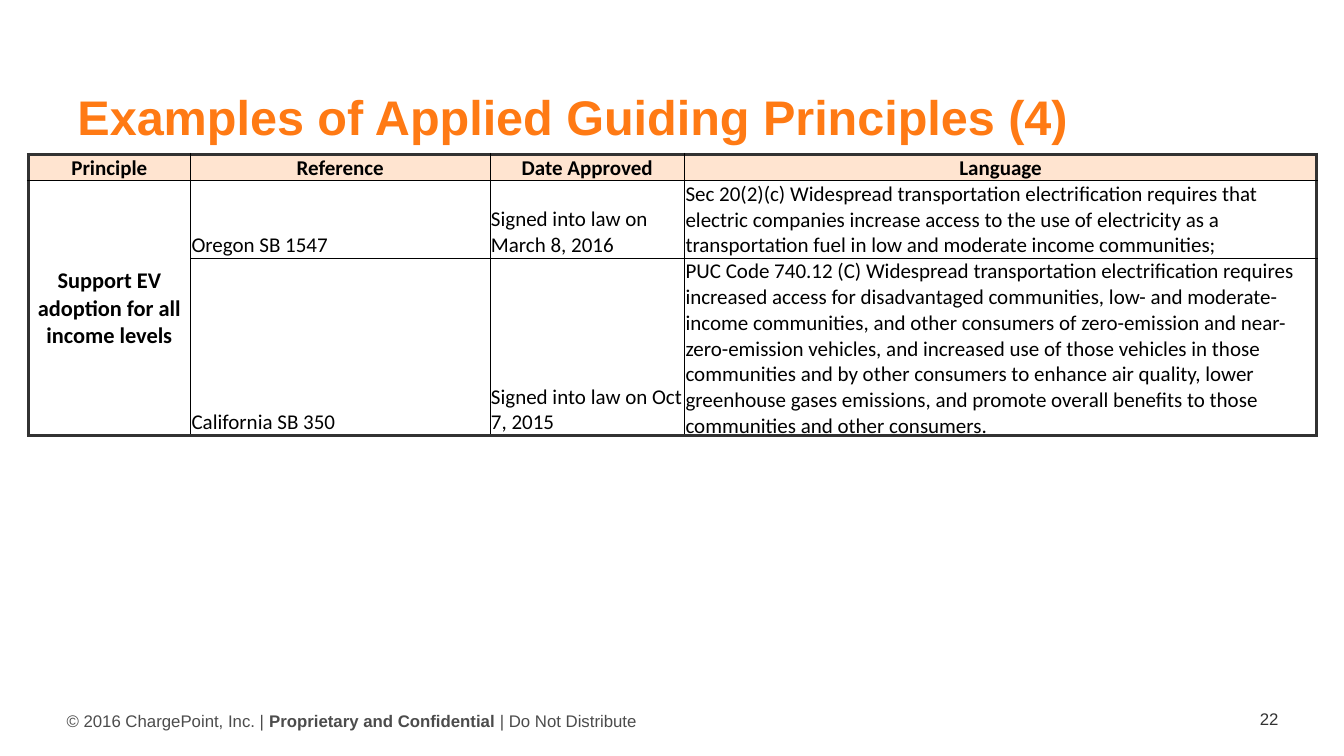
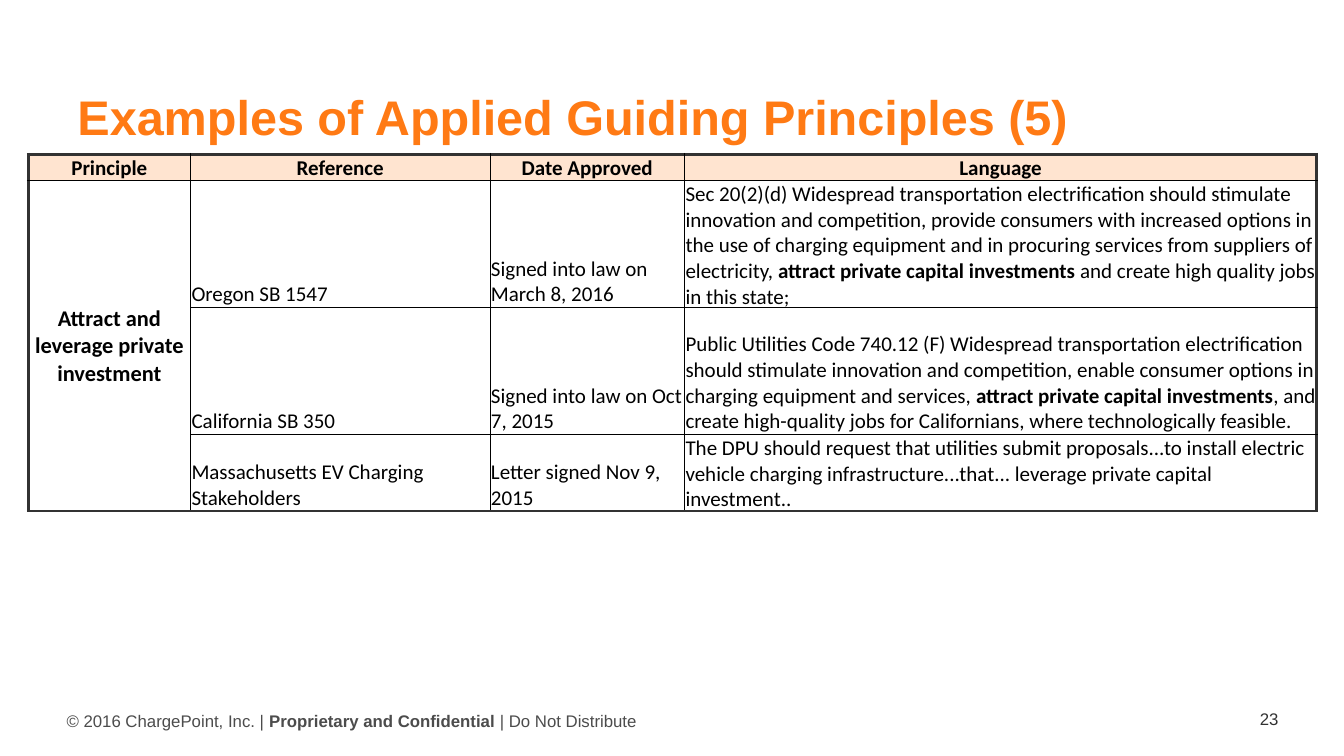
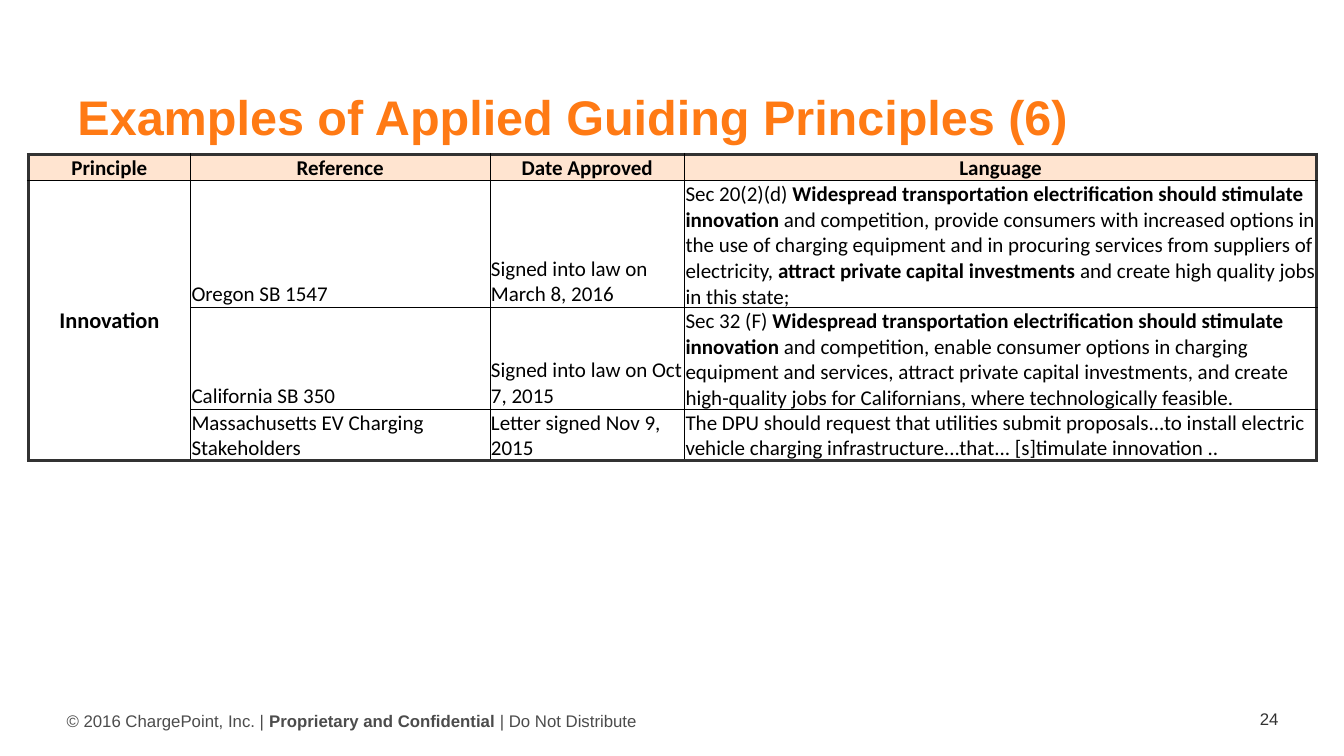
from lxml import etree
from pptx import Presentation
from pptx.dml.color import RGBColor
from pptx.enum import text as t
from pptx.oxml import ns
from pptx.util import Inches, Pt

ORANGE = RGBColor(0xFF, 0x7A, 0x14)
PEACH = RGBColor(0xFF, 0xE4, 0xD0)
BLACK = RGBColor(0x00, 0x00, 0x00)
CHARCOAL = RGBColor(0x32, 0x32, 0x32)
GREY = RGBColor(0x4C, 0x4C, 0x4C)

THIN = (BLACK, 0.5)
THICK = (CHARCOAL, 2.25)

TITLE = "Examples of Applied Guiding Principles ({})"
FOOTER = "© 2016 ChargePoint, Inc. | **Proprietary and Confidential **| Do Not Distribute"
HEADINGS = ["Principle", "Reference", "Date Approved", "Language"]
COLUMN_WIDTHS = [1.61, 2.97, 1.93, 6.27]
HEADING_HEIGHT = 0.26

OREGON = ("Oregon SB 1547", "Signed into law on March 8, 2016")
CALIFORNIA = ("California SB 350", "Signed into law on Oct 7, 2015")
MASSACHUSETTS = ("Massachusetts EV Charging Stakeholders", "Letter signed Nov 9, 2015")

# Each example: source, row height, quoted language
PRINCIPLES = [
    ("Support EV adoption for all income levels", [
        (OREGON, 0.77,
         "Sec 20(2)(c) Widespread transportation electrification requires that electric "
         "companies increase access to the use of electricity as a transportation fuel in "
         "low and moderate income communities;"),
        (CALIFORNIA, 1.76,
         "PUC Code 740.12 (C) Widespread transportation electrification requires increased "
         "access for disadvantaged communities, low- and moderate-income communities, and "
         "other consumers of zero-emission and near-zero-emission vehicles, and increased "
         "use of those vehicles in those communities and by other consumers to enhance air "
         "quality, lower greenhouse gases emissions, and promote overall benefits to those "
         "communities and other consumers."),
    ]),
    ("Attract and leverage private investment", [
        (OREGON, 1.26,
         "Sec 20(2)(d) Widespread transportation electrification should stimulate innovation "
         "and competition, provide consumers with increased options in the use of charging "
         "equipment and in procuring services from suppliers of electricity, **attract "
         "private capital investments** and create high quality jobs in this state;"),
        (CALIFORNIA, 1.26,
         "Public Utilities Code 740.12 (F) Widespread transportation electrification should "
         "stimulate innovation and competition, enable consumer options in charging "
         "equipment and services, **attract private capital investments**, and create "
         "high-quality jobs for Californians, where technologically feasible."),
        (MASSACHUSETTS, 0.76,
         "The DPU should request that utilities submit proposals...to install electric "
         "vehicle charging infrastructure...that... leverage private capital investment.."),
    ]),
    ("Innovation", [
        (OREGON, 1.26,
         "Sec 20(2)(d) **Widespread transportation electrification should stimulate "
         "innovation** and competition, provide consumers with increased options in the use "
         "of charging equipment and in procuring services from suppliers of electricity, "
         "**attract private capital investments** and create high quality jobs in this "
         "state;"),
        (CALIFORNIA, 1.01,
         "Sec 32 (F) **Widespread transportation electrification should stimulate "
         "innovation** and competition, enable consumer options in charging equipment and "
         "services, attract private capital investments, and create high-quality jobs for "
         "Californians, where technologically feasible."),
        (MASSACHUSETTS, 0.51,
         "The DPU should request that utilities submit proposals...to install electric "
         "vehicle charging infrastructure...that... [s]timulate innovation .."),
    ]),
]


def write(frame, text, size, color, font="Arial", bold=False, align=t.PP_ALIGN.LEFT):
    """Fill a text frame; parts between double asterisks become bold."""
    para = frame.paragraphs[0]
    para.alignment = align
    for index, part in enumerate(text.split("**")):
        span = para.add_run()
        span.text = part
        span.font.name = font
        span.font.size = Pt(size)
        span.font.bold = bold or index % 2 == 1
        span.font.color.rgb = color


def add_text(page, box, text, anchor=t.MSO_ANCHOR.TOP, wrap=True, **style):
    frame = page.shapes.add_textbox(*map(Inches, box)).text_frame
    frame.word_wrap = wrap
    frame.vertical_anchor = anchor
    write(frame, text, **style)
    return frame


def add_title(page, box, text):
    add_text(page, box, text, size=34.7, color=ORANGE, bold=True)


def add_footer(page, box, number):
    left, top, width, height = box
    frame = add_text(page, (left, top + 0.03, 5.81, 0.3), FOOTER, wrap=False,
                     size=12, color=GREY)
    frame.margin_left = 0
    frame.auto_size = t.MSO_AUTO_SIZE.SHAPE_TO_FIT_TEXT
    add_text(page, (left + width - 1.56, top, 1.56, height), str(number),
             anchor=t.MSO_ANCHOR.MIDDLE, size=12, color=CHARCOAL, align=t.PP_ALIGN.RIGHT)


def set_borders(cell, **edges):
    """Draw the sides L, R, T and B, each given as (colour, points)."""
    properties = cell._tc.get_or_add_tcPr()
    for index, side in enumerate("LRTB"):
        color, points = edges[side]
        line = etree.Element(ns.qn(f"a:ln{side}"), w=str(Pt(points)))
        fill = etree.SubElement(line, ns.qn("a:solidFill"))
        etree.SubElement(fill, ns.qn("a:srgbClr"), val=str(color))
        properties.insert(index, line)


def format_cell(cell, text, heading, centred, size):
    cell.margin_left = cell.margin_right = cell.margin_top = Inches(0.01)
    cell.margin_bottom = 0
    cell.vertical_anchor = t.MSO_ANCHOR.MIDDLE if centred else t.MSO_ANCHOR.BOTTOM
    if heading:
        cell.fill.solid()
        cell.fill.fore_color.rgb = PEACH
    else:
        cell.fill.background()
    if text:
        write(cell.text_frame, text, size=size, color=BLACK, font="Calibri", bold=centred,
              align=t.PP_ALIGN.CENTER if centred else t.PP_ALIGN.LEFT)


def add_principle_table(page, left, top, principle, examples):
    rows = [HEADINGS] + [["", *source, language] for source, _, language in examples]
    rows[1][0] = principle
    heights = [HEADING_HEIGHT] + [height for _, height, _ in examples]
    last_row, last_column = len(rows) - 1, len(HEADINGS) - 1
    table = page.shapes.add_table(
        len(rows), len(HEADINGS), Inches(left), Inches(top),
        Inches(sum(COLUMN_WIDTHS)), Inches(sum(heights))).table
    table.first_row = table.horz_banding = False
    for column, width in zip(table.columns, COLUMN_WIDTHS):
        column.width = Inches(width)
    for row, height in zip(table.rows, heights):
        row.height = Inches(height)
    table.cell(1, 0).merge(table.cell(last_row, 0))
    for r, texts in enumerate(rows):
        for c, text in enumerate(texts):
            cell = table.cell(r, c)
            in_principle = r > 0 and c == 0
            format_cell(cell, text, heading=r == 0, centred=r == 0 or c == 0,
                        size=16 if in_principle else 15)
            set_borders(cell,
                        L=THICK if c == 0 else THIN,
                        R=THICK if c == last_column else THIN,
                        T=THICK if r == 0 else THIN,
                        B=THICK if r == last_row or in_principle else THIN)


def main():
    deck = Presentation()
    deck.slide_width, deck.slide_height = Inches(13.33), Inches(7.5)
    for index, (principle, examples) in enumerate(PRINCIPLES):
        page = deck.slides.add_slide(deck.slide_layouts[6])
        add_footer(page, (0.66, 6.97, 12.12, 0.33), 22 + index)
        add_principle_table(page, 0.28, 1.53, principle, examples)
        add_title(page, (0.67, 0.81, 12, 0.58), TITLE.format(4 + index))
    deck.save("out.pptx")


if __name__ == "__main__":
    main()
